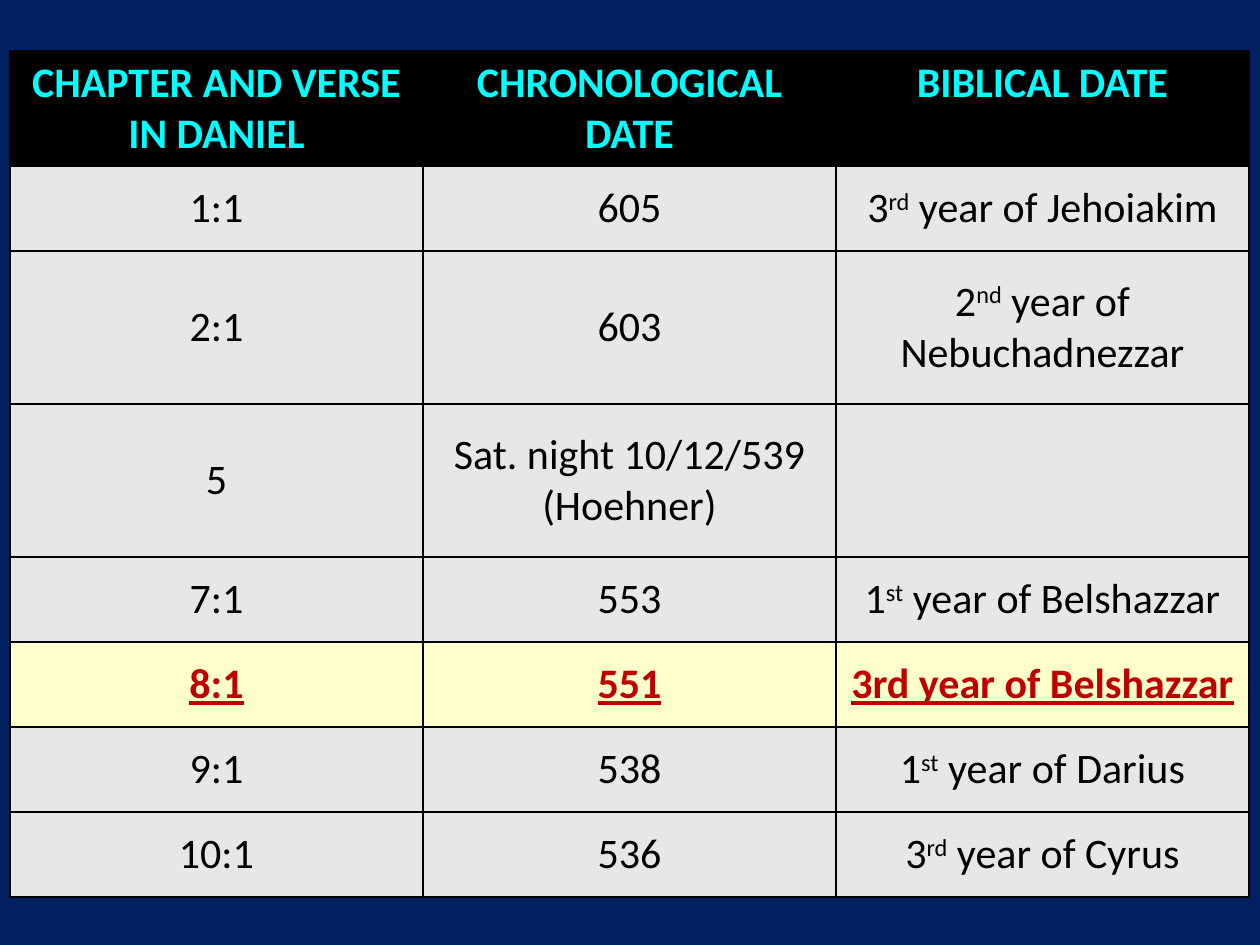
from lxml.etree import SubElement
from pptx import Presentation
from pptx.dml.color import RGBColor
from pptx.enum.text import MSO_ANCHOR as Anchor, PP_ALIGN as Align
from pptx.oxml import parse_xml
from pptx.oxml.ns import nsdecls, qn
from pptx.util import Emu, Pt

EMU_PER_PX = 914400 / 126
NAVY = RGBColor(0x00, 0x20, 0x60)
BLACK = RGBColor(0x00, 0x00, 0x00)
CYAN = RGBColor(0x00, 0xFF, 0xFF)
GREY = RGBColor(0xE7, 0xE7, 0xE7)
CREAM = RGBColor(0xFF, 0xFF, 0xCC)
RED = RGBColor(0xC0, 0x00, 0x00)

HEADER = {"fill": BLACK, "color": CYAN, "anchor": Anchor.TOP,
          "font": {"bold": True, "underline": False}}
BODY = {"fill": GREY, "color": BLACK, "anchor": Anchor.MIDDLE,
        "font": {"bold": False, "underline": False}}
HIGHLIGHT = {"fill": CREAM, "color": RED, "anchor": Anchor.MIDDLE,
             "font": {"bold": True, "underline": True}}

SUPERSCRIPT_MARK = "^"
COLUMN_WIDTH = 413
CHRONOLOGY = [
    (95, HEADER, ("CHAPTER AND VERSE IN DANIEL", "CHRONOLOGICAL DATE", "BIBLICAL DATE")),
    (85, BODY, ("1:1", "605", "3^rd^ year of Jehoiakim")),
    (153, BODY, ("2:1", "603", "2^nd^ year of Nebuchadnezzar")),
    (153, BODY, ("5", "Sat. night 10/12/539 (Hoehner)", "")),
    (85, BODY, ("7:1", "553", "1^st^ year of Belshazzar")),
    (85, HIGHLIGHT, ("8:1", "551", "3rd year of Belshazzar")),
    (85, BODY, ("9:1", "538", "1^st^ year of Darius")),
    (85, BODY, ("10:1", "536", "3^rd^ year of Cyrus")),
]


def px(length):
    return Emu(round(length * EMU_PER_PX))


def add_borders(cell):
    properties = cell._tc.get_or_add_tcPr()
    for position, side in enumerate(("lnL", "lnR", "lnT", "lnB")):
        border = parse_xml(
            f'<a:{side} {nsdecls("a")} w="{Pt(1)}"><a:solidFill>'
            f'<a:srgbClr val="{BLACK}"/></a:solidFill></a:{side}>')
        properties.insert(position, border)


def write_text(paragraph, text, style):
    paragraph.alignment = Align.CENTER
    spacing = SubElement(paragraph._p.get_or_add_pPr(), qn("a:spcBef"))
    SubElement(spacing, qn("a:spcPct")).set("val", "20000")
    if not text:
        return
    for index, part in enumerate(text.split(SUPERSCRIPT_MARK)):
        run = paragraph.add_run()
        run.text = part
        font_format = {"name": "Calibri", "size": Pt(24), **style["font"]}
        for attribute, value in font_format.items():
            setattr(run.font, attribute, value)
        run.font.color.rgb = style["color"]
        if index % 2:
            run._r.get_or_add_rPr().set("baseline", "30000")


def fill_cell(cell, text, style):
    cell.fill.solid()
    cell.fill.fore_color.rgb = style["fill"]
    cell.vertical_anchor = style["anchor"]
    add_borders(cell)
    write_text(cell.text_frame.paragraphs[0], text, style)


def add_chronology(slide):
    column_count = len(CHRONOLOGY[0][2])
    total_height = sum(height for height, _, _ in CHRONOLOGY)
    chronology = slide.shapes.add_table(
        len(CHRONOLOGY), column_count, px(10), px(51),
        px(COLUMN_WIDTH * column_count), px(total_height)).table
    for column in chronology.columns:
        column.width = px(COLUMN_WIDTH)
    for row, (height, style, entries) in zip(chronology.rows, CHRONOLOGY):
        row.height = px(height)
        for cell, entry in zip(row.cells, entries):
            fill_cell(cell, entry, style)


def main():
    deck = Presentation()
    deck.slide_width, deck.slide_height = px(1260), px(945)
    slide = deck.slides.add_slide(deck.slide_layouts[6])
    slide.background.fill.solid()
    slide.background.fill.fore_color.rgb = NAVY
    add_chronology(slide)
    deck.save("out.pptx")


if __name__ == "__main__":
    main()
